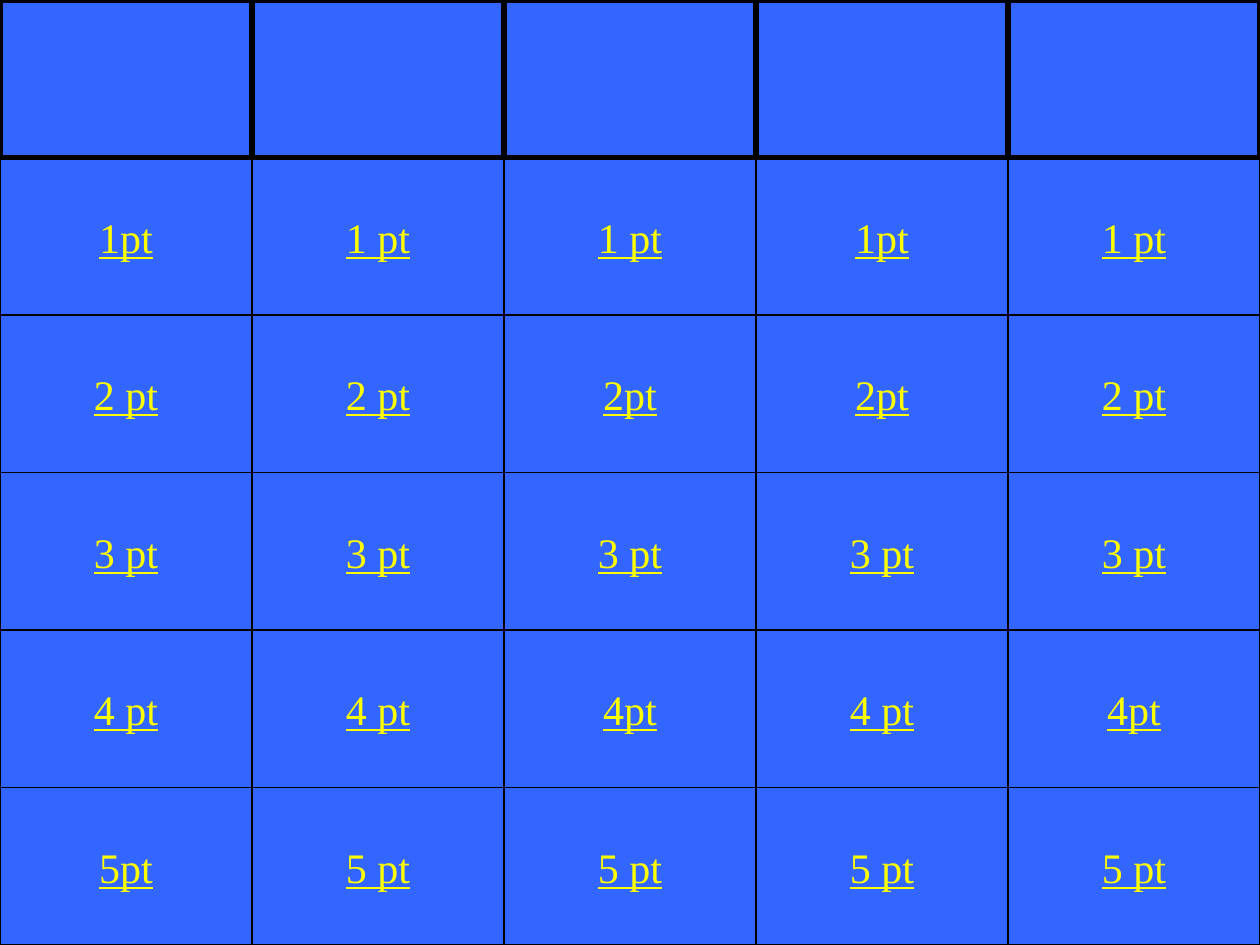
"""Build a quiz board with five blank category headings and five rows of point buttons."""
import pptx
import pptx.util
import pptx.dml.color
import pptx.enum.shapes
import pptx.enum.text

Inches = pptx.util.Inches
Pt = pptx.util.Pt
SHAPES = pptx.enum.shapes.MSO_SHAPE
COLORS = {"board": "3366FF", "border": "000000", "points": "FFFF00"}
COLUMN_WIDTH, ROW_HEIGHT = 2, 1.25
POINT_ROWS = [
    ["1pt", "1 pt", "1 pt", "1pt", "1 pt"],
    ["2 pt", "2 pt", "2pt", "2pt", "2 pt"],
    ["3 pt", "3 pt", "3 pt", "3 pt", "3 pt"],
    ["4 pt", "4 pt", "4pt", "4 pt", "4pt"],
    ["5pt", "5 pt", "5 pt", "5 pt", "5 pt"],
]


def color(name):
    return pptx.dml.color.RGBColor.from_string(COLORS[name])


def add_tile(kind, column, row, border_width):
    tile = slide.shapes.add_shape(
        kind,
        Inches(column * COLUMN_WIDTH),
        Inches(row * ROW_HEIGHT),
        Inches(COLUMN_WIDTH),
        Inches(ROW_HEIGHT),
    )
    tile.shadow.inherit = False
    tile.fill.solid()
    tile.fill.fore_color.rgb = color("board")
    tile.line.color.rgb = color("border")
    tile.line.width = Pt(border_width)
    return tile


deck = pptx.Presentation()
deck.slide_width = Inches(10)
deck.slide_height = Inches(7.5)
slide = deck.slides.add_slide(deck.slide_layouts[6])
slide.background.fill.solid()
slide.background.fill.fore_color.rgb = color("board")

for column, column_points in enumerate(zip(*POINT_ROWS)):
    for row, points in enumerate(column_points, start=1):
        button = add_tile(SHAPES.ACTION_BUTTON_CUSTOM, column, row, 0.75)
        frame = button.text_frame
        frame.word_wrap = False
        frame.vertical_anchor = pptx.enum.text.MSO_ANCHOR.MIDDLE
        paragraph = frame.paragraphs[0]
        paragraph.alignment = pptx.enum.text.PP_ALIGN.CENTER
        label = paragraph.add_run()
        label.text = points
        label.font.name = "Times New Roman"
        label.font.size = Pt(24)
        label.font.underline = True
        label.font.color.rgb = color("points")

for column in range(len(POINT_ROWS[0])):
    add_tile(SHAPES.RECTANGLE, column, 0, 3)

deck.save("out.pptx")
